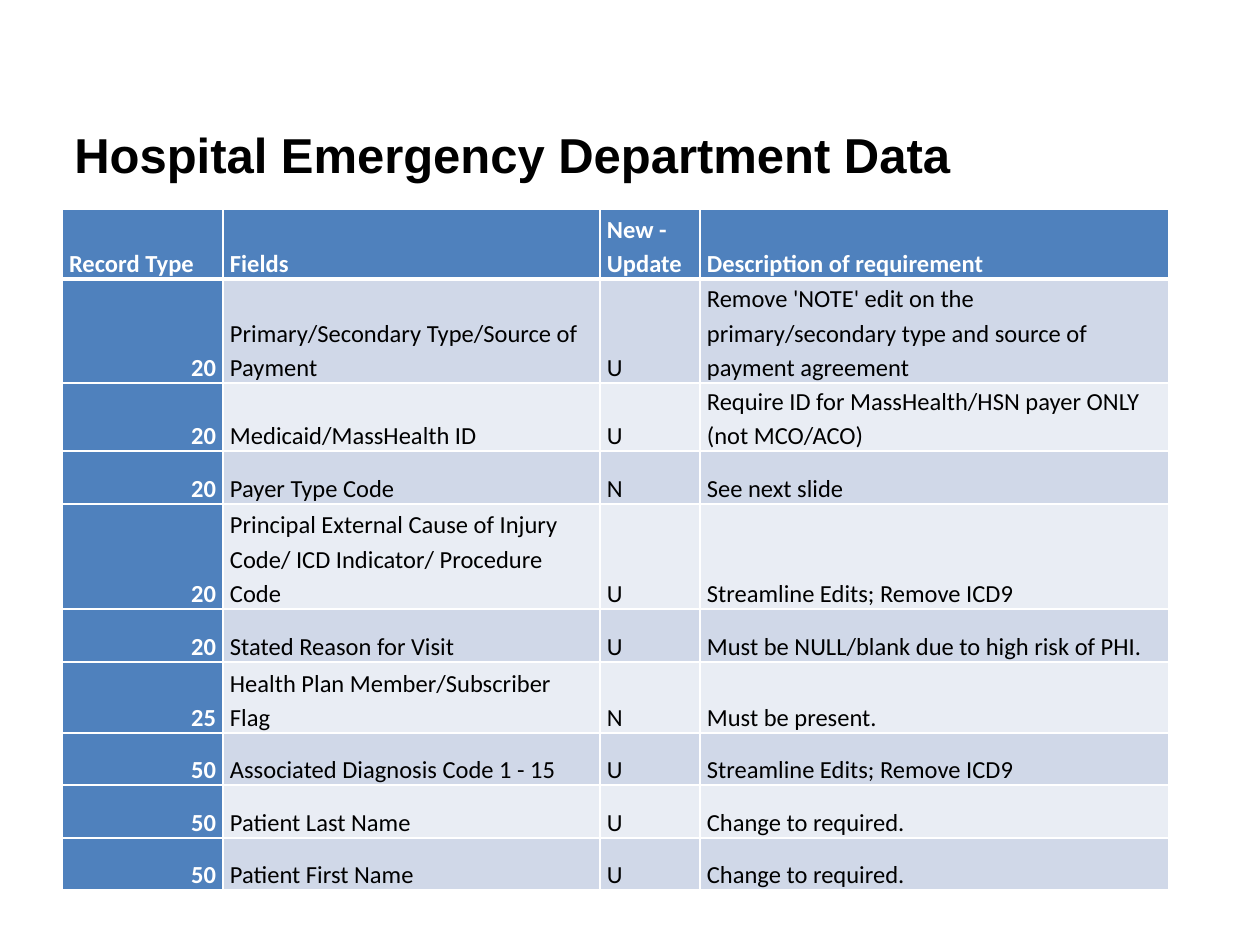
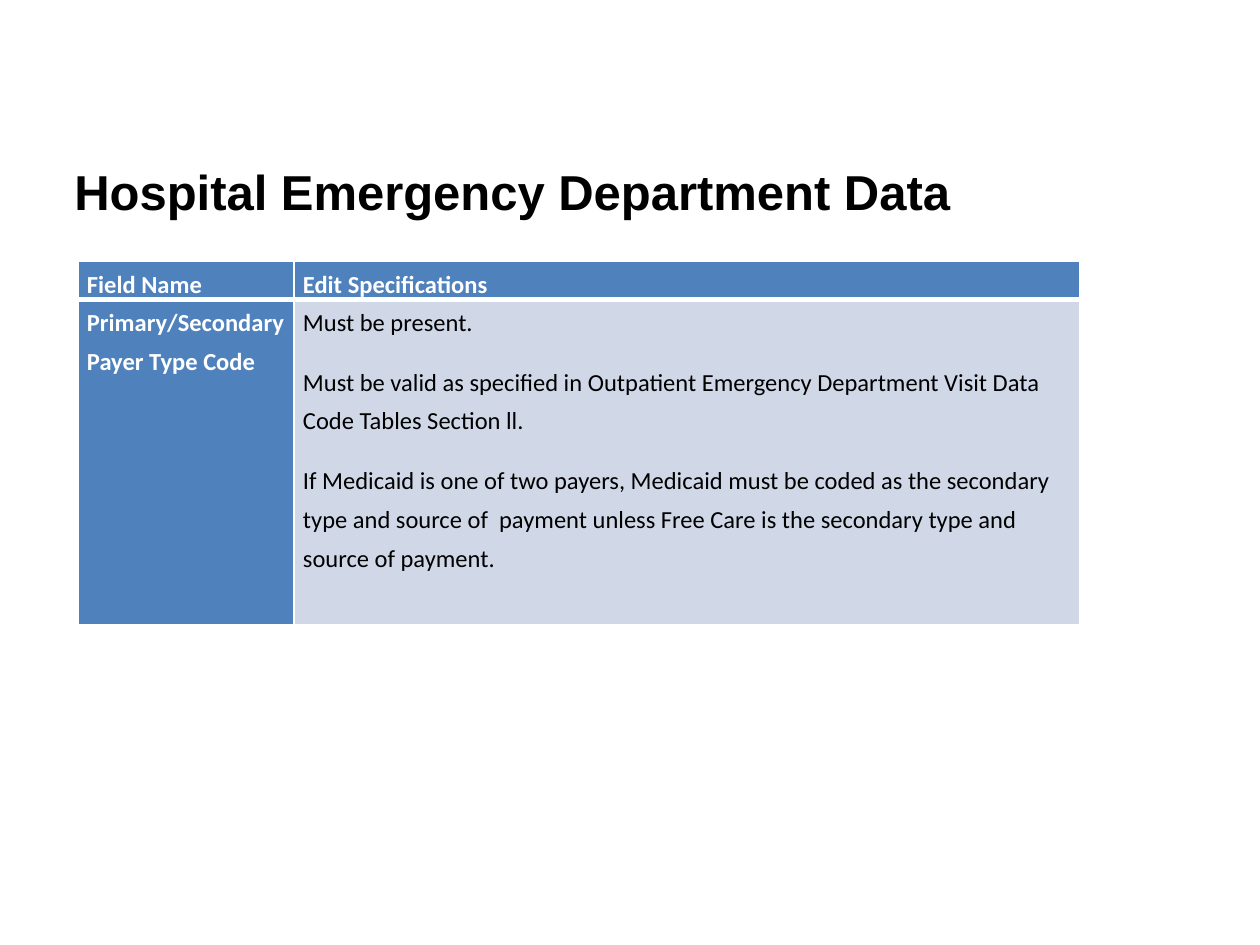
from dataclasses import dataclass

from lxml import etree
from pptx import Presentation
from pptx import util as u
from pptx.dml.color import RGBColor
from pptx.enum import text
from pptx.oxml.ns import qn

SCALE = 914400 // 126


@dataclass(frozen=True)
class Theme:
    """Colours, fonts and type sizes shared by the slides."""
    ink: str = "000000"
    paper: str = "FFFFFF"
    accent: str = "4F81BD"
    bands: tuple = ("D0D8E8", "E9EDF4")
    title_font: str = "Arial"
    body_font: str = "Calibri"
    title_size: int = 28
    body_size: int = 14
    rule: int = 1
    heavy_rule: int = 3


THEME = Theme()
TITLE = "Hospital Emergency Department Data"

RECORD_ROWS = [
    ("Record Type", "Fields", "New - Update", "Description of requirement"),
    ("20", "Primary/Secondary Type/Source of Payment", "U",
     "Remove 'NOTE' edit on the primary/secondary type and source of payment agreement"),
    ("20", "Medicaid/MassHealth ID", "U",
     "Require ID for MassHealth/HSN payer ONLY (not MCO/ACO)"),
    ("20", "Payer Type Code", "N", "See next slide"),
    ("20", "Principal External Cause of Injury Code/ ICD Indicator/ Procedure Code", "U",
     "Streamline Edits; Remove ICD9"),
    ("20", "Stated Reason for Visit", "U", "Must be NULL/blank due to high risk of PHI."),
    ("25", "Health Plan Member/Subscriber Flag", "N", "Must be present."),
    ("50", "Associated Diagnosis Code 1 - 15", "U", "Streamline Edits; Remove ICD9"),
    ("50", "Patient Last Name", "U", "Change to required."),
    ("50", "Patient First Name", "U", "Change to required."),
]

EDIT_ROWS = [
    ("Field Name", "Edit Specifications"),
    ("Primary/Secondary Payer Type Code",
     "Must be present.\n"
     "Must be valid as specified in Outpatient Emergency Department Visit Data "
     "Code Tables Section ll.\n"
     "If Medicaid is one of two payers, Medicaid must be coded as the secondary type "
     "and source of  payment unless Free Care is the secondary type and source of payment."),
]


def px(length):
    """Turn whole pixels into EMU."""
    return u.Emu(length * SCALE)


def write(frame, words, *, font=THEME.body_font, size=THEME.body_size, color=THEME.ink,
          bold=False, align=text.PP_ALIGN.LEFT, spacing=1.0, gap=0):
    """Fill a text frame with one paragraph per line of words."""
    frame.word_wrap = True
    for index, line in enumerate(words.split("\n")):
        para = frame.add_paragraph() if index else frame.paragraphs[0]
        para.alignment = align
        para.line_spacing = spacing
        if index:
            para.space_before = u.Pt(gap)
        span = para.add_run()
        span.text = line
        span.font.name = font
        span.font.size = u.Pt(size)
        span.font.bold = bold
        span.font.color.rgb = RGBColor.from_string(color)


def add_title(page, box):
    """Place the slide title, centred vertically in its box."""
    frame = page.shapes.add_textbox(*map(px, box)).text_frame
    frame.vertical_anchor = text.MSO_ANCHOR.MIDDLE
    write(frame, TITLE, font=THEME.title_font, size=THEME.title_size, bold=True)


def set_borders(cell, row):
    """Rule a cell on four sides, heavier between header and body."""
    widths = {"L": THEME.rule, "R": THEME.rule,
              "T": THEME.heavy_rule if row == 1 else THEME.rule,
              "B": THEME.heavy_rule if row == 0 else THEME.rule}
    properties = cell._tc.get_or_add_tcPr()
    for side, width in widths.items():
        line = etree.SubElement(properties, qn(f"a:ln{side}"), w=str(u.Pt(width)))
        fill = etree.SubElement(line, qn("a:solidFill"))
        etree.SubElement(fill, qn("a:srgbClr"), val=THEME.paper)


def add_grid(page, origin, rows, widths, heights, *, inset, anchor, spacing,
             gap=0, number_align=text.PP_ALIGN.LEFT):
    """Place a table with an accent header row and accent first column."""
    box = (*origin, sum(widths), sum(heights))
    grid = page.shapes.add_table(len(rows), len(widths), *map(px, box)).table
    grid.first_row = grid.horz_banding = False
    for column, width in zip(grid.columns, widths):
        column.width = px(width)
    for line, height in zip(grid.rows, heights):
        line.height = px(height)
    for row, values in enumerate(rows):
        for column, words in enumerate(values):
            cell = grid.cell(row, column)
            heading = row == 0 or column == 0
            set_borders(cell, row)
            cell.fill.solid()
            cell.fill.fore_color.rgb = RGBColor.from_string(
                THEME.accent if heading else THEME.bands[(row - 1) % 2])
            cell.margin_left = cell.margin_right = px(inset)
            cell.margin_top = cell.margin_bottom = 0
            cell.vertical_anchor = anchor
            write(cell.text_frame, words, bold=heading, spacing=spacing, gap=gap,
                  color=THEME.paper if heading else THEME.ink,
                  align=number_align if row and column == 0 else text.PP_ALIGN.LEFT)


def records_slide(page):
    """Build the list of changed fields by record type."""
    add_title(page, (62, 72, 1107, 164))
    add_grid(page, (62, 209), RECORD_ROWS, (161, 377, 100, 469),
             (70, 104, 68, 53, 105, 53, 71, 52, 53, 52), inset=7,
             anchor=text.MSO_ANCHOR.BOTTOM, spacing=1.15,
             number_align=text.PP_ALIGN.RIGHT)


def edits_slide(page):
    """Build the edit specifications for the payer type code."""
    add_title(page, (62, 147, 1107, 88))
    add_grid(page, (78, 261), EDIT_ROWS, (216, 786), (38, 326), inset=9,
             anchor=text.MSO_ANCHOR.TOP, spacing=1.3, gap=12)


def main():
    """Build and save the deck."""
    deck = Presentation()
    deck.slide_width, deck.slide_height = px(1260), px(945)
    for build in (records_slide, edits_slide):
        build(deck.slides.add_slide(deck.slide_layouts[6]))
    deck.save("out.pptx")


if __name__ == "__main__":
    main()
